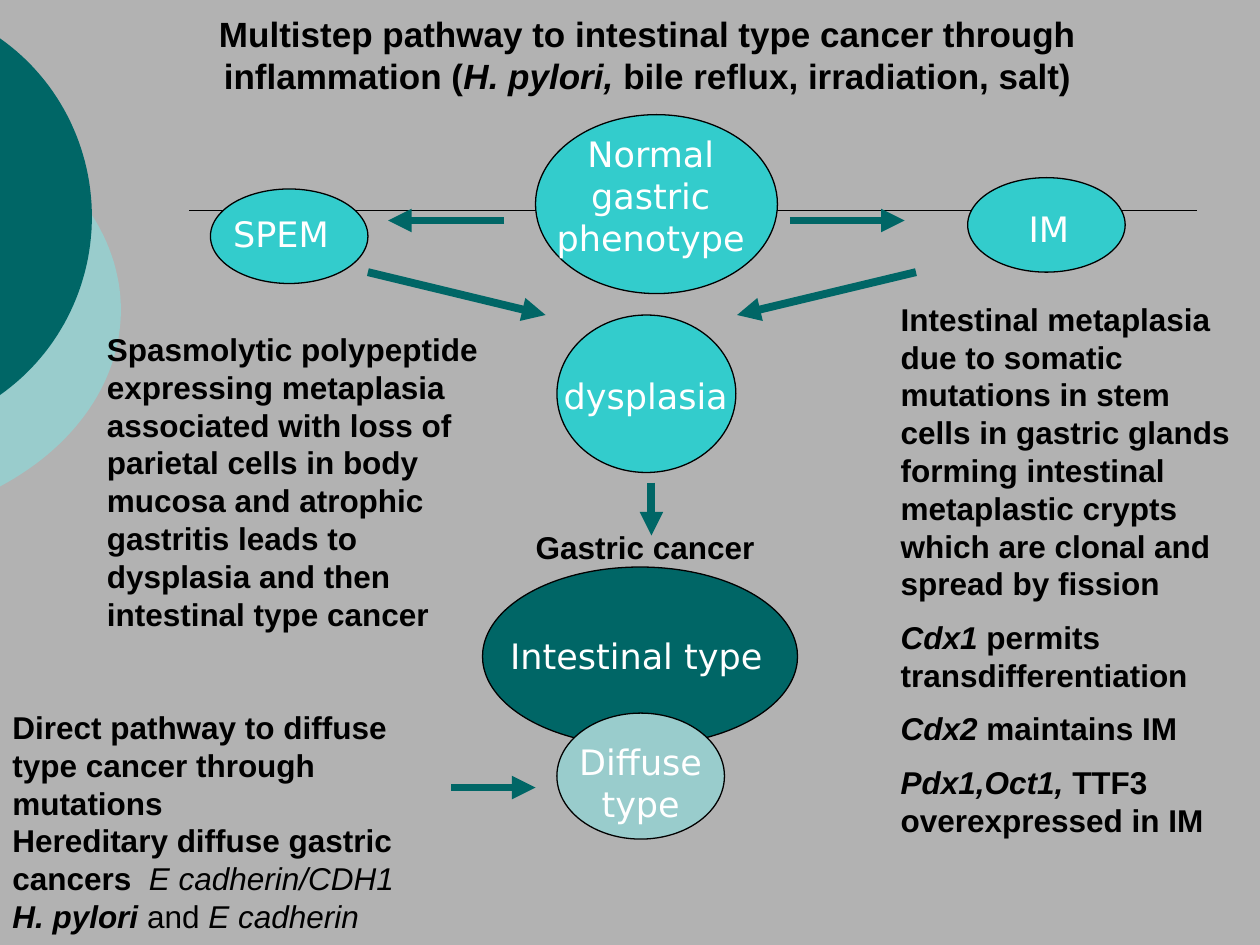
import math

from lxml import etree
from pptx import Presentation
from pptx import util as u
from pptx.dml.color import RGBColor
from pptx.enum import shapes, text
from pptx.oxml import ns

BLACK = RGBColor(0x00, 0x00, 0x00)
WHITE = RGBColor(0xFF, 0xFF, 0xFF)
GREY = RGBColor(0xB2, 0xB2, 0xB2)
DARK_TEAL = RGBColor(0x00, 0x66, 0x66)
PALE_TEAL = RGBColor(0x99, 0xCC, 0xCC)
TURQUOISE = RGBColor(0x33, 0xCC, 0xCC)

deck = Presentation()
deck.slide_width, deck.slide_height = u.Inches(10), u.Inches(7.5)
page = deck.slides.add_slide(deck.slide_layouts[6])
page.background.fill.solid()
page.background.fill.fore_color.rgb = GREY


def add_text(paragraphs, at, font="Arial", size=18, color=BLACK, align=text.PP_ALIGN.LEFT, gap=0):
    """Each paragraph is a list of (words, style); style holds b for bold, i for italic."""
    box = page.shapes.add_textbox(*map(u.Inches, at))
    box.text_frame.word_wrap = True
    for index, pieces in enumerate(paragraphs):
        para = box.text_frame.paragraphs[0] if index == 0 else box.text_frame.add_paragraph()
        para.alignment = align
        para.space_before = u.Pt(gap if index else 0)
        for words, style in pieces:
            for number, line in enumerate(words.split("\n")):
                if number:
                    para.add_line_break()
                span = para.add_run()
                span.text = line
                span.font.name, span.font.size = font, u.Pt(size)
                span.font.bold, span.font.italic = "b" in style, "i" in style
                span.font.color.rgb = color


def add_line(start, end, color, width, arrow=True):
    line = page.shapes.add_connector(shapes.MSO_CONNECTOR.STRAIGHT, *map(u.Inches, start + end))
    line.line.color.rgb = color
    line.line.width = u.Pt(width)
    if arrow:
        etree.SubElement(line.line._get_or_add_ln(), ns.qn("a:tailEnd"), type="triangle")
    etree.SubElement(line._element.spPr, ns.qn("a:effectLst"))


# Ellipses on the left, cut off at the slide edge
for center_x, center_y, radius_x, radius_y, color in [
    (-1.29, 2.46, 2.25, 1.71, PALE_TEAL),
    (-0.96, 1.72, 1.69, 1.72, DARK_TEAL),
]:
    limit = math.acos(-center_x / radius_x)
    angles = [limit * (step / 30 - 1) for step in range(61)]
    points = [(u.Inches(center_x + radius_x * math.cos(angle)),
               u.Inches(center_y + radius_y * math.sin(angle))) for angle in angles]
    builder = page.shapes.build_freeform(*points[0])
    builder.add_line_segments(points[1:], close=True)
    segment = builder.convert_to_shape()
    segment.shadow.inherit = False
    segment.fill.solid()
    segment.fill.fore_color.rgb = color
    segment.line.fill.background()

# Rule behind the top row
add_line((1.5, 1.67), (9.5, 1.67), BLACK, 1, arrow=False)

# Stages: ellipse, fill, label and label place
for at, color, label, label_at in [
    ((3.83, 4.5, 2.5, 1.42), DARK_TEAL, "Intestinal type", (3.84, 4.99, 2.42, 0.43)),
    ((4.42, 5.66, 1.33, 1), PALE_TEAL, "Diffuse type", (4.17, 5.83, 1.83, 0.77)),
    ((4.25, 0.91, 1.92, 1.42), TURQUOISE, "Normal gastric phenotype", (4.25, 1, 1.83, 1.1)),
    ((4.42, 2.5, 1.42, 1.25), TURQUOISE, "dysplasia", (4, 2.92, 2.25, 0.43)),
    ((7.68, 1.41, 1.25, 0.75), TURQUOISE, "IM", (7.99, 1.6, 0.67, 0.43)),
    ((1.67, 1.5, 1.25, 0.75), TURQUOISE, "SPEM", (1.69, 1.64, 1.08, 0.43)),
]:
    stage = page.shapes.add_shape(shapes.MSO_SHAPE.OVAL, *map(u.Inches, at))
    stage.shadow.inherit = False
    stage.fill.solid()
    stage.fill.fore_color.rgb = color
    stage.line.color.rgb = BLACK
    stage.line.width = u.Pt(0.75)
    add_text([[(label, "")]], label_at, font="DejaVu Sans", size=20, color=WHITE,
             align=text.PP_ALIGN.CENTER)

# Arrows between stages
for start, end in [
    ((6.27, 1.75), (7.18, 1.75)),
    ((4, 1.75), (3.08, 1.75)),
    ((7.27, 2.16), (5.85, 2.5)),
    ((2.92, 2.16), (4.33, 2.5)),
    ((3.58, 6.25), (4.25, 6.25)),
    ((5.17, 3.83), (5.17, 4.25)),
]:
    add_line(start, end, DARK_TEAL, 4.5)

# Title and cancer heading
add_text([[("Multistep pathway to intestinal type cancer through inflammation (", "b"),
           ("H. pylori, ", "bi"), ("bile reflux, irradiation, salt)", "b")]],
         (1.1, 0.05, 8.08, 0.77), size=20, align=text.PP_ALIGN.CENTER)
add_text([[("Gastric cancer", "b")]], (3.83, 4.14, 2.58, 0.4), align=text.PP_ALIGN.CENTER)

# Notes on the three pathways
add_text([[("Spasmolytic polypeptide expressing metaplasia associated with loss of parietal cells "
            "in body mucosa and atrophic gastritis leads to dysplasia and then intestinal type "
            "cancer", "b")]], (0.75, 2.57, 3.19, 2.5))
add_text([
    [("Intestinal metaplasia due to somatic mutations in stem cells in gastric glands forming "
      "intestinal metaplastic crypts which are clonal and spread by fission", "b")],
    [("Cdx1 ", "bi"), ("permits transdifferentiation", "b")],
    [("Cdx2 ", "bi"), ("maintains IM", "b")],
    [("Pdx1,Oct1, ", "bi"), ("TTF3 overexpressed in IM", "b")],
], (7.05, 2.33, 2.95, 4.46), gap=9)
add_text([[("Direct pathway to diffuse type cancer through mutations \n"
            "Hereditary diffuse gastric cancers  ", "b"),
           ("E cadherin/CDH1 ", "i"), ("H. pylori", "bi"), (" and ", ""), ("E cadherin", "i")]],
         (0, 5.57, 3.36, 1.9))

deck.save("out.pptx")
